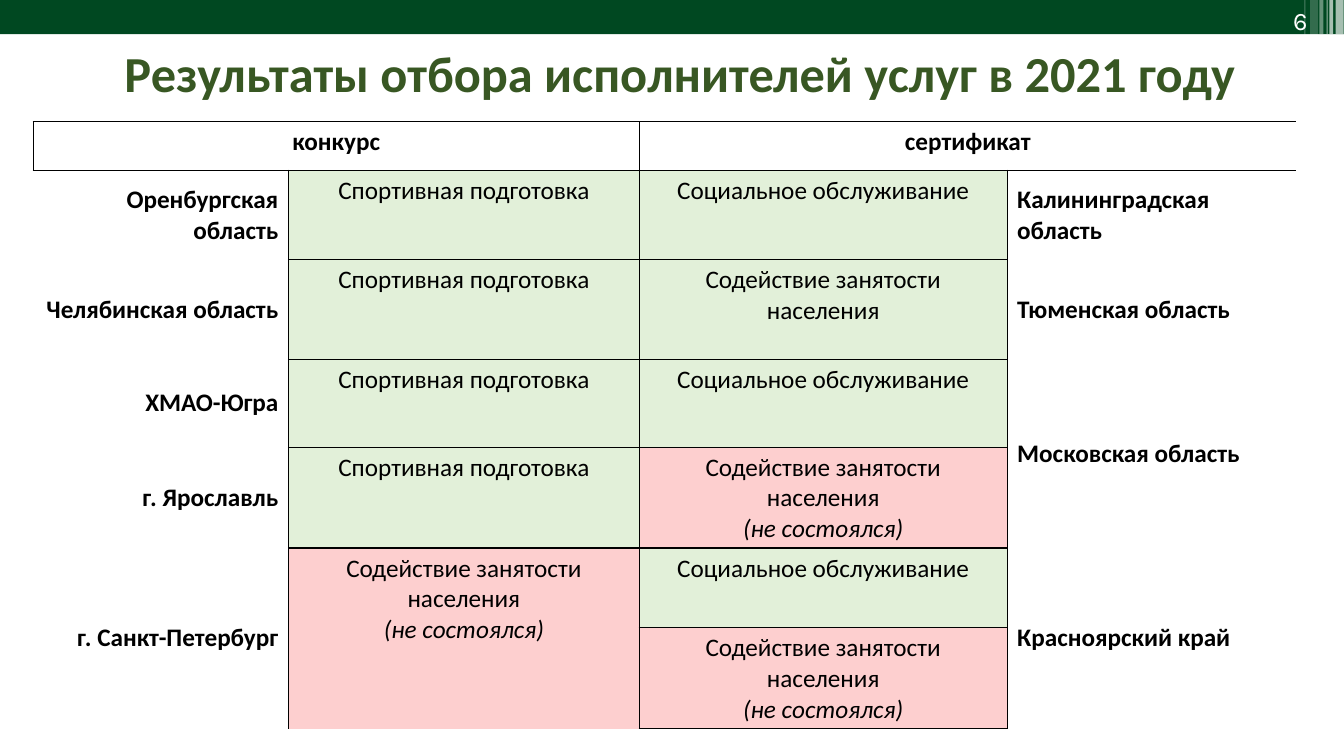
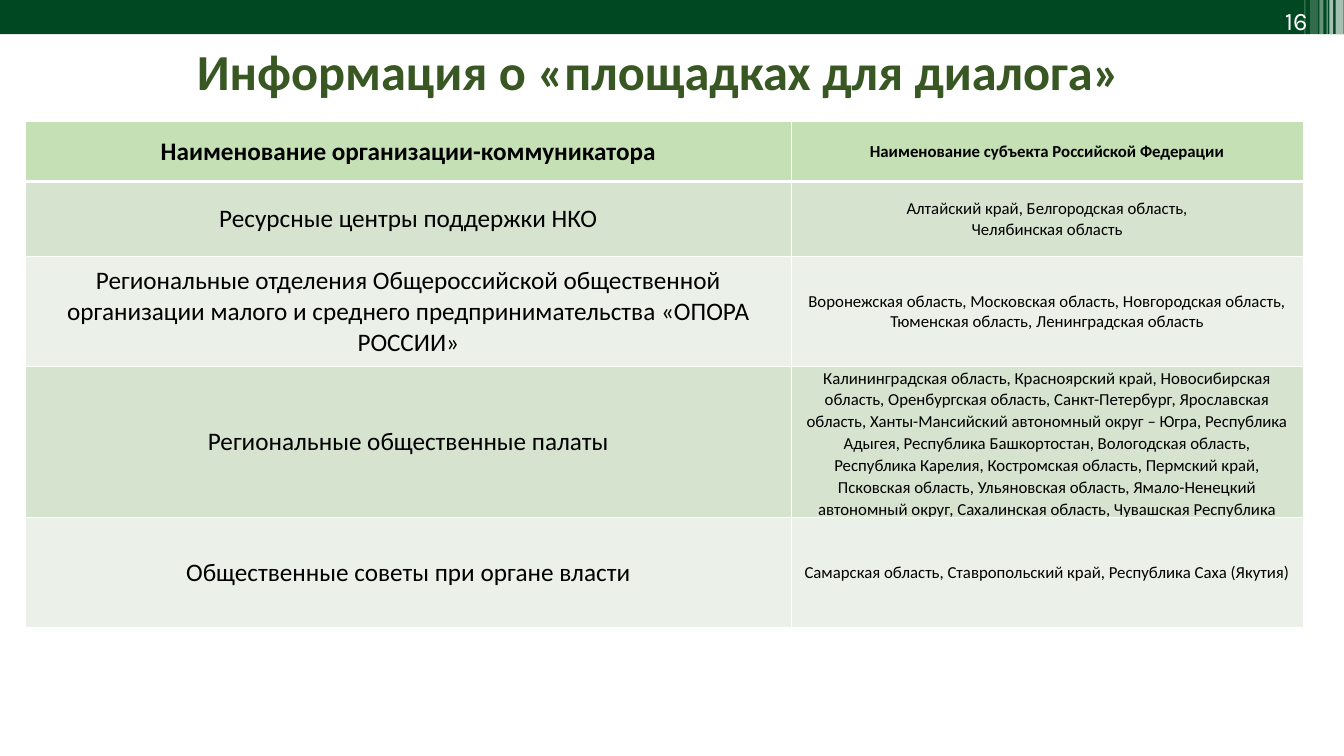
from lxml import etree
from pptx import Presentation
from pptx import util as u
from pptx.dml.color import RGBColor
from pptx.enum import shapes, text
from pptx.oxml.ns import qn

WHITE, BLACK = "FFFFFF", "000000"
BAND, TITLE = "004821", "385723"
DONE, FAILED = "E2F0D9", "FDCFCF"
HEAD, ODD, EVEN = "C5E0B4", "D5E3CF", "EBF1E9"
FONT, NUMBER_FONT = "Calibri", "Karla"
LEFT, CENTER, RIGHT = text.PP_ALIGN.LEFT, text.PP_ALIGN.CENTER, text.PP_ALIGN.RIGHT
TOP, MIDDLE = text.MSO_ANCHOR.TOP, text.MSO_ANCHOR.MIDDLE
STRIPES = [(33.66, 0.2, 0.86, 65), (33.5, 0.1, 0.86, 65), (33.43, 0.03, 0.86, 60),
           (33.25, 0.1, 0.86, 40), (33.02, 0.2, 0.91, 20), (32.87, 0.03, 0.91, 30)]

TRAINING = ["Спортивная подготовка"]
CARE = ["Социальное обслуживание"]
JOBS = ["Содействие занятости населения"]
NO_BIDS = JOBS + ["(не состоялся)"]

CONTESTS = [("Оренбургская область", TRAINING, 1), ("Челябинская область", TRAINING, 1),
            ("ХМАО-Югра", TRAINING, 1), ("г. Ярославль", TRAINING, 1),
            ("г. Санкт-Петербург", NO_BIDS, 2)]
CERTIFICATES = [("Калининградская область", [CARE]), ("Тюменская область", [JOBS]),
                ("Московская область", [CARE, NO_BIDS]), ("Красноярский край", [CARE, NO_BIDS])]

PLATFORMS = [
    ("Наименование организации-коммуникатора", "Наименование субъекта Российской Федерации"),
    ("Ресурсные центры поддержки НКО", "Алтайский край, Белгородская область,\nЧелябинская область"),
    ("Региональные отделения Общероссийской общественной организации малого и среднего "
     "предпринимательства «ОПОРА РОССИИ»",
     "Воронежская область, Московская область, Новгородская область, Тюменская область, "
     "Ленинградская область"),
    ("Региональные общественные палаты",
     "Калининградская область, Красноярский край, Новосибирская область, Оренбургская область, "
     "Санкт-Петербург, Ярославская область, Ханты-Мансийский автономный округ – Югра, "
     "Республика Адыгея, Республика Башкортостан, Вологодская область, Республика Карелия, "
     "Костромская область, Пермский край, Псковская область, Ульяновская область, "
     "Ямало-Ненецкий автономный округ, Сахалинская область, Чувашская Республика"),
    ("Общественные советы при органе власти",
     "Самарская область, Ставропольский край, Республика Саха (Якутия)"),
]


def rgb(value):
    """Turn a hex string into a colour."""
    return RGBColor.from_string(value)


def write(tf, lines, size, color, align, bold=False, font=FONT):
    """Fill a text frame with paragraphs; a line in brackets is italic."""
    for i, line in enumerate(lines):
        p = tf.paragraphs[0] if i == 0 else tf.add_paragraph()
        p.text = line
        p.alignment = align
        for r in p.runs:
            r.font.name = font
            r.font.size = u.Pt(size)
            r.font.bold = bold
            r.font.italic = line.startswith("(")
            r.font.color.rgb = rgb(color)


def add_bar(s, x, y, w, h, color, opacity=100):
    """Draw a borderless rectangle with the given opacity in percent."""
    sp = s.shapes.add_shape(shapes.MSO_SHAPE.RECTANGLE, u.Cm(x), u.Cm(y), u.Cm(w), u.Cm(h))
    sp.shadow.inherit = False
    sp.line.fill.background()
    sp.fill.solid()
    sp.fill.fore_color.rgb = rgb(color)
    if opacity < 100:
        clr = sp._element.spPr.find(qn("a:solidFill")).find(qn("a:srgbClr"))
        etree.SubElement(clr, qn("a:alpha")).set("val", str(opacity * 1000))


def add_text(s, x, y, w, h, line, size, color, align, **style):
    """Place a wrapped text box holding one line."""
    tf = s.shapes.add_textbox(u.Cm(x), u.Cm(y), u.Cm(w), u.Cm(h)).text_frame
    tf.word_wrap = True
    write(tf, [line], size, color, align, **style)


def add_frame(prs, number, title, x, y, w):
    """Add a slide with the top band, page number and title."""
    s = prs.slides.add_slide(prs.slide_layouts[6])
    add_bar(s, 0, 0, 33.87, 0.86, BAND)
    for left, width, height, opacity in STRIPES:
        add_bar(s, left, 0, width, height, WHITE, opacity)
    add_text(s, 30.15, 0, 3.05, 0.94, str(number), 18, WHITE, RIGHT, font=NUMBER_FONT)
    add_text(s, x, y, w, 1.8, title, 36, TITLE, CENTER, bold=True)
    return s


def add_grid(s, x, y, cols, rows):
    """Add a plain table with the given column widths and row heights."""
    tbl = s.shapes.add_table(len(rows), len(cols), u.Cm(x), u.Cm(y),
                             u.Cm(sum(cols)), u.Cm(sum(rows))).table
    tbl.first_row = tbl.horz_banding = False
    for col, width in zip(tbl.columns, cols):
        col.width = u.Cm(width)
    for row, height in zip(tbl.rows, rows):
        row.height = u.Cm(height)
    return tbl


def set_borders(cell, edges, color):
    """Draw the edges given as side to width in points and hide the others."""
    tcPr = cell._tc.get_or_add_tcPr()
    for side in "LRTB":
        ln = etree.SubElement(tcPr, qn(f"a:ln{side}"))
        if side in edges:
            ln.set("w", str(u.Pt(edges[side])))
            fill = etree.SubElement(ln, qn("a:solidFill"))
            etree.SubElement(fill, qn("a:srgbClr")).set("val", color)
        else:
            etree.SubElement(ln, qn("a:noFill"))


def fill_cell(tbl, row, col, lines, fill, edges, line=BLACK, span=(1, 1), size=18,
              align=CENTER, anchor=TOP, bold=False):
    """Write, colour and outline a cell, merged over span rows and columns."""
    down, across = span
    for i in range(down):
        for j in range(across):
            outer = {"L": j == 0, "R": j == across - 1, "T": i == 0, "B": i == down - 1}
            part = tbl.cell(row + i, col + j)
            set_borders(part, {k: v for k, v in edges.items() if outer[k]}, line)
            part.fill.solid()
            part.fill.fore_color.rgb = rgb(fill)
    cell = tbl.cell(row, col)
    if span != (1, 1):
        cell.merge(tbl.cell(row + down - 1, col + across - 1))
    cell.vertical_anchor = anchor
    write(cell.text_frame, lines, size, BLACK, align, bold)
    return cell


def add_results(s, x, y):
    """Build the table of contests and certificates by region."""
    tbl = add_grid(s, x, y, [6.43, 8.84, 9.27, 7.29], [1.22, 2.26, 2.51, 2.21, 2.51, 2.01, 2.54])
    box = dict.fromkeys("LRTB", 1)

    def region(row, col, name, height, side, align):
        """Write a region name beside its services."""
        edges = {side: 1, "T": 1} if row == 1 else {side: 1}
        fill_cell(tbl, row, col, [name], WHITE, edges, span=(height, 1),
                  align=align, anchor=MIDDLE, bold=True)

    def service(row, col, lines, height=1):
        """Write a service, coloured by its outcome."""
        fill_cell(tbl, row, col, lines, FAILED if lines is NO_BIDS else DONE, box, span=(height, 1))

    for col, name in ((0, "конкурс"), (2, "сертификат")):
        fill_cell(tbl, 0, col, [name], WHITE, box, span=(1, 2), bold=True)
    row = 1
    for name, lines, height in CONTESTS:
        region(row, 0, name, height, "R", RIGHT)
        service(row, 1, lines, height)
        row += height
    row = 1
    for name, services in CERTIFICATES:
        region(row, 3, name, len(services), "L", LEFT)
        for i, lines in enumerate(services):
            service(row + i, 2, lines)
        row += len(services)


def add_platforms(s, x, y):
    """Build the table of communicators and their regions."""
    tbl = add_grid(s, x, y, [19.3, 12.9], [1.5, 1.9, 2.77, 3.8, 2.77])
    for row, pair in enumerate(PLATFORMS):
        fill = HEAD if row == 0 else ODD if row % 2 else EVEN
        edges = {"L": 1, "R": 1, "T": 3 if row == 1 else 1, "B": 3 if row == 0 else 1}
        for col, (line, size) in enumerate(zip(pair, (18, 12))):
            fill_cell(tbl, row, col, [line], fill, edges, WHITE, size=size,
                      anchor=MIDDLE, bold=row == 0)
    chambers = tbl.cell(3, 1)
    chambers.vertical_anchor = TOP
    chambers.margin_left = chambers.margin_right = u.Cm(0.3)
    chambers.margin_top = chambers.margin_bottom = 0
    p = chambers.text_frame.paragraphs[0]
    p.line_spacing = 1.07
    p.space_after = u.Pt(8)


def main():
    """Build and save the presentation."""
    prs = Presentation()
    prs.slide_width, prs.slide_height = u.Cm(33.87), u.Cm(19.05)
    s = add_frame(prs, 6, "Результаты отбора исполнителей услуг в 2021 году", 0.43, 0.94, 33.43)
    add_results(s, 0.84, 3.07)
    s = add_frame(prs, 16, "Информация о «площадках для диалога»", 2.6, 0.89, 28)
    add_platforms(s, 0.64, 3.07)
    prs.save("out.pptx")


if __name__ == "__main__":
    main()
